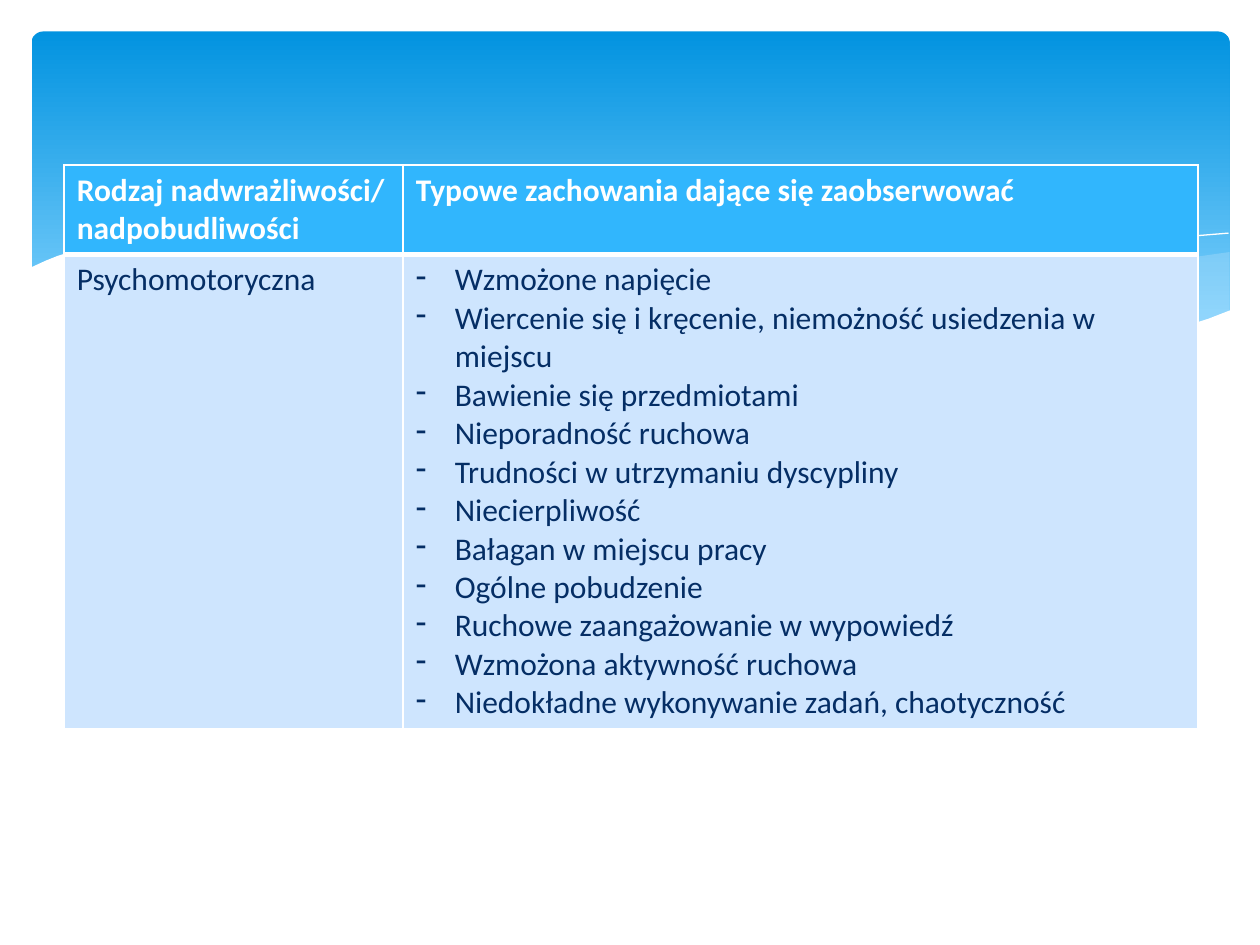
from pptx import Presentation, util as u
from pptx.dml.color import RGBColor
from pptx.enum import shapes as kinds
from pptx.oxml import parse_xml
from pptx.oxml.ns import nsdecls, qn

# Content
HEAD = ["Rodzaj nadwrażliwości/ nadpobudliwości",
        "Typowe zachowania dające się zaobserwować"]
TYPE = "Psychomotoryczna"
SIGNS = [
    "Wzmożone napięcie",
    "Wiercenie się i kręcenie, niemożność usiedzenia w miejscu",
    "Bawienie się przedmiotami",
    "Nieporadność ruchowa",
    "Trudności w utrzymaniu dyscypliny",
    "Niecierpliwość",
    "Bałagan w miejscu pracy",
    "Ogólne pobudzenie",
    "Ruchowe zaangażowanie w wypowiedź",
    "Wzmożona aktywność ruchowa",
    "Niedokładne wykonywanie zadań, chaotyczność",
]
ROWS = [
    dict(cells=[[HEAD[0]], [HEAD[1]]], fill="31B6FD", high=0.71, base=3,
         font=dict(color="FFFFFF", bold=True)),
    dict(cells=[[TYPE], SIGNS], fill="CEE5FE", high=3.76, base=1,
         font=dict(color="052E65", bold=False)),
]
COLS = [2.69, 6.31]

# Waves: points in inches, from back to front
WAVES = [
    dict(fill="C6E7FC", alpha=29, pts=[
        (9.76, 2), (9.48, 2.04), (9.21, 2.1), (8.91, 2.16), (8.61, 2.23),
        (8.05, 2.37), (7.53, 2.48), (7.06, 2.57), (6.61, 2.65), (6.91, 2.69),
        (7.19, 2.72), (7.45, 2.75), (7.69, 2.77), (8.03, 2.78), (8.35, 2.77),
        (8.63, 2.75), (8.89, 2.72), (9.13, 2.67), (9.35, 2.62), (9.49, 2.57),
        (9.76, 2.47)]),
    dict(fill="C6E7FC", alpha=40, pts=[
        (8.93, 2.73), (8.66, 2.69), (8.07, 2.6), (7.41, 2.47), (6.68, 2.31),
        (6.29, 2.22), (5.98, 2.14), (5.69, 2.08), (5.41, 2.03), (5.14, 1.98),
        (4.89, 1.94), (4.42, 1.89), (3.99, 1.86), (3.61, 1.85), (3.28, 1.87),
        (2.86, 1.91), (3.23, 1.96), (3.62, 2.03), (4.04, 2.11), (4.49, 2.22),
        (5.3, 2.4), (5.84, 2.52), (6.18, 2.58), (6.5, 2.64), (6.8, 2.68),
        (7.09, 2.72), (7.36, 2.75), (7.61, 2.77), (7.96, 2.78), (8.28, 2.78),
        (8.57, 2.77)]),
    dict(line="FFFFFF", pts=[
        (3.09, 1.95), (3.35, 1.91), (3.63, 1.89), (4.01, 1.87), (4.33, 1.87),
        (4.69, 1.89), (5.1, 1.92), (5.56, 1.97), (6.08, 2.04), (6.65, 2.13),
        (7.27, 2.26), (7.95, 2.41), (8.69, 2.61), (9.07, 2.72)]),
    dict(line="FFFFFF", pts=[
        (6.13, 2.57), (6.53, 2.46), (6.95, 2.35), (7.48, 2.23), (8.06, 2.1),
        (8.66, 1.99), (8.95, 1.94), (9.24, 1.9), (9.51, 1.87), (9.75, 1.85)]),
    dict(fill="FFFFFF", pts=[
        (9.77, 2.46), (9.59, 2.53), (9.4, 2.59), (9.2, 2.65), (8.99, 2.69),
        (8.75, 2.73), (8.5, 2.75), (8.23, 2.77), (7.93, 2.76), (7.61, 2.75),
        (7.26, 2.72), (6.88, 2.68), (6.48, 2.62), (6.03, 2.54), (5.55, 2.45),
        (5.03, 2.33), (4.47, 2.2), (3.91, 2.07), (3.4, 1.97), (2.92, 1.9),
        (2.5, 1.86), (2.11, 1.84), (1.77, 1.84), (1.46, 1.85), (1.19, 1.87),
        (0.95, 1.91), (0.76, 1.95), (0.59, 1.99), (0.46, 2.03), (0.36, 2.07),
        (0.23, 2.13), (0.23, 3.29), (9.77, 3.29)]),
]


def rgb(code):
    return RGBColor.from_string(code)


def paint(fill, code):
    fill.solid()
    fill.fore_color.rgb = rgb(code)


def draw(group, wave):
    pts = [(u.Inches(x), u.Inches(y)) for x, y in wave["pts"]]
    form = group.build_freeform(*pts[0])
    form.add_line_segments(pts[1:], close="fill" in wave)
    shape = form.convert_to_shape()
    shape.shadow.inherit = False
    if "fill" in wave:
        paint(shape.fill, wave["fill"])
        shape.line.fill.background()
    else:
        shape.fill.background()
        paint(shape.line.fill, wave["line"])
        shape.line.width = 0
    if "alpha" in wave:
        tint = next(shape._element.iter(qn("a:srgbClr")))
        tint.append(parse_xml(
            f'<a:alpha {nsdecls("a")} val="{wave["alpha"] * 1000}"/>'))


def edge(cell, widths):
    for side, width in widths.items():
        cell._tc.get_or_add_tcPr().append(parse_xml(
            f'<a:ln{side} {nsdecls("a")} w="{u.Pt(width)}"><a:solidFill>'
            f'<a:srgbClr val="FFFFFF"/></a:solidFill></a:ln{side}>'))


def write(frame, lines, font):
    frame.text = "\n".join(lines)
    for para in frame.paragraphs:
        look = dict(name="Calibri", size=u.Pt(18), bold=font["bold"])
        for key, value in look.items():
            setattr(para.runs[0].font, key, value)
        para.runs[0].font.color.rgb = rgb(font["color"])
        if len(lines) > 1:
            props = para._p.get_or_add_pPr()
            props.set("marL", str(u.Inches(0.31)))
            props.set("indent", str(-u.Inches(0.31)))
            props.append(parse_xml(f'<a:buChar {nsdecls("a")} char="-"/>'))


def main():
    deck = Presentation()
    deck.slide_width, deck.slide_height = u.Inches(10), u.Inches(7.5)
    slide = deck.slides.add_slide(deck.slide_layouts[6])

    # Gradient band
    band = slide.shapes.add_shape(
        kinds.MSO_SHAPE.ROUNDED_RECTANGLE,
        *map(u.Inches, (0.25, 0.25, 9.51, 2.7)))
    band.adjustments[0] = 0.034
    band.shadow.inherit = False
    band.line.fill.background()
    band.fill.gradient()
    band.fill.gradient_angle = 270
    tones = [(0, "0293E0"), (0.9, "83D3FE")]
    for stop, (place, code) in zip(band.fill.gradient_stops, tones):
        stop.position = place
        stop.color.rgb = rgb(code)

    # Waves
    group = slide.shapes.add_group_shape().shapes
    for wave in WAVES:
        draw(group, wave)

    # Table
    high = sum(row["high"] for row in ROWS)
    table = slide.shapes.add_table(
        len(ROWS), len(COLS),
        *map(u.Inches, (0.51, 1.31, sum(COLS), high))).table
    for col, width in zip(table.columns, COLS):
        col.width = u.Inches(width)
    for r, row in enumerate(ROWS):
        table.rows[r].height = u.Inches(row["high"])
        top = ROWS[r - 1]["base"] if r else 1
        for c, lines in enumerate(row["cells"]):
            cell = table.cell(r, c)
            edge(cell, dict(L=1, R=1, T=top, B=row["base"]))
            paint(cell.fill, row["fill"])
            write(cell.text_frame, lines, row["font"])

    deck.save("out.pptx")


if __name__ == "__main__":
    main()
